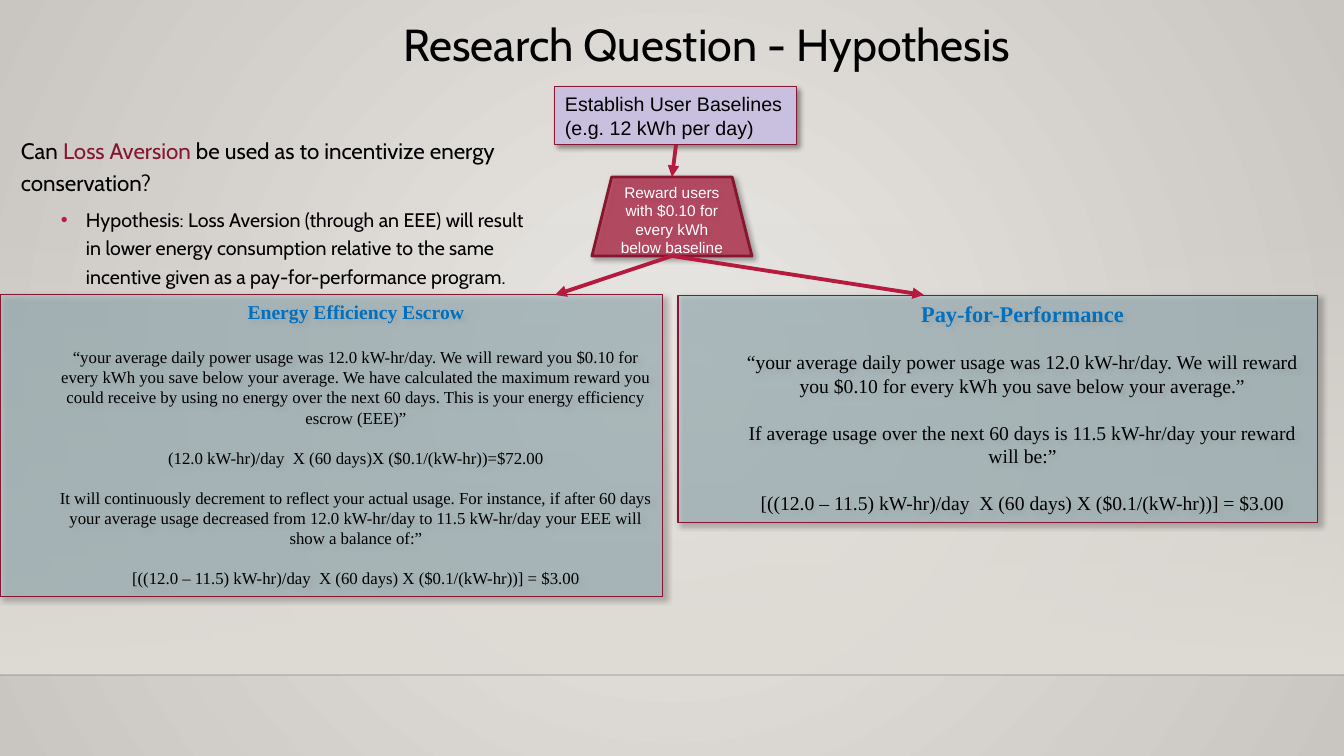
from pptx import Presentation
from pptx.dml.color import RGBColor
from pptx.enum.shapes import MSO_CONNECTOR, MSO_SHAPE
from pptx.enum.text import MSO_ANCHOR, MSO_AUTO_SIZE, PP_ALIGN
from pptx.oxml import parse_xml
from pptx.oxml.ns import nsdecls, qn
from pptx.util import Emu, Pt

RECTANGLE, TRAPEZOID = MSO_SHAPE.RECTANGLE, MSO_SHAPE.TRAPEZOID
STRAIGHT = MSO_CONNECTOR.STRAIGHT
TOP, MIDDLE = MSO_ANCHOR.TOP, MSO_ANCHOR.MIDDLE
LEFT, CENTER = PP_ALIGN.LEFT, PP_ALIGN.CENTER
FIXED, GROW = MSO_AUTO_SIZE.NONE, MSO_AUTO_SIZE.SHAPE_TO_FIT_TEXT
TOP_SIDE, BOTTOM_SIDE = 0, 2
WIDTH, HEIGHT = 1344, 756
EMU_PER_PX = 12192000 / WIDTH

COLORS = {
    "center": "EBE9E6", "edge": "C9C5C0", "floor": "DFDBD5", "horizon": "000001",
    "black": "000000", "white": "FFFFFF", "accent": "851530", "bullet": "B71E42",
    "outline": "871631", "arrow": "B71A3F", "baseline": "C9BFDF",
    "panel": "A4BEC6", "heading": "0070C0",
}


def px(value):
    return Emu(round(value * EMU_PER_PX))


def element(markup):
    """Parse one DrawingML element given without its namespace declaration."""
    head, tail = markup.split(">", 1)
    slash = "/" if head.endswith("/") else ""
    return parse_xml(f"{head.rstrip('/')} {nsdecls('a')}{slash}>{tail}")


def set_alpha(parent, percent):
    color = next(parent.iter(qn("a:srgbClr")))
    color.append(element(f'<a:alpha val="{percent * 1000}"/>'))


def set_gradient(parent, stops, direction):
    """Replace the solid fill of parent by (position, color, alpha) stops."""
    marks = "".join(
        f'<a:gs pos="{position * 1000}"><a:srgbClr val="{COLORS[color]}">'
        f'<a:alpha val="{alpha * 1000}"/></a:srgbClr></a:gs>'
        for position, color, alpha in stops)
    gradient = element(f"<a:gradFill><a:gsLst>{marks}</a:gsLst>{direction}</a:gradFill>")
    parent.replace(parent.find(qn("a:solidFill")), gradient)


class SlideBuilder:
    def __init__(self):
        self.presentation = Presentation()
        self.presentation.slide_width = px(WIDTH)
        self.presentation.slide_height = px(HEIGHT)
        layout = self.presentation.slide_layouts[1]
        self.slide = self.presentation.slides.add_slide(layout)
        self.shapes = self.slide.shapes

    def color(self, name):
        return RGBColor.from_string(COLORS[name])

    def backdrop(self, horizon, fade_top):
        fill = self.slide.background.fill
        fill.solid()
        fill.fore_color.rgb = self.color("center")
        set_gradient(
            next(self.slide._element.iter(qn("p:bgPr"))),
            [(0, "center", 100), (100, "edge", 100)],
            '<a:path path="circle"><a:fillToRect l="50000" t="50000" r="50000" b="50000"/></a:path>')
        fade = self.shape(RECTANGLE, (0, fade_top, WIDTH, horizon - fade_top), "floor")
        set_gradient(fade._element.spPr, [(0, "floor", 0), (100, "floor", 100)],
                     '<a:lin ang="5400000" scaled="0"/>')
        line = self.line((0, horizon), (WIDTH, horizon), "horizon", 1)
        set_alpha(line._element.spPr, 20)
        for shape in (fade, line):
            self.shapes.title._element.addprevious(shape._element)

    def place(self, shape, box):
        for name, value in zip(("left", "top", "width", "height"), box):
            setattr(shape, name, px(value))

    def shape(self, kind, box, fill, alpha=100, line_width=0):
        """Add a filled shape; an outlined one also casts a soft shadow."""
        shape = self.shapes.add_shape(kind, *map(px, box))
        shape.shadow.inherit = False
        shape.fill.solid()
        shape.fill.fore_color.rgb = self.color(fill)
        set_alpha(shape._element.spPr, alpha)
        if line_width:
            shape.line.color.rgb = self.color("outline")
            shape.line.width = Pt(line_width)
            shape._element.spPr.find(qn("a:effectLst")).append(element(
                f'<a:outerShdw blurRad="{Pt(4)}" dist="{Pt(3)}" dir="2700000" rotWithShape="0">'
                '<a:srgbClr val="000000"><a:alpha val="40000"/></a:srgbClr></a:outerShdw>'))
        else:
            shape.line.fill.background()
        return shape

    def frame(self, shape, anchor=TOP, auto_size=FIXED):
        values = {"word_wrap": True, "vertical_anchor": anchor, "auto_size": auto_size,
                  "margin_left": px(10), "margin_right": px(10),
                  "margin_top": px(5), "margin_bottom": px(5)}
        for name, value in values.items():
            setattr(shape.text_frame, name, value)
        return shape.text_frame

    def paragraph(self, frame, runs, font, size, align=LEFT, spacing=1.0, before=0,
                  indent=0, hanging=0, bullet=None, level=0, bold=False):
        """Fill the empty first paragraph or add one; runs are (text, color) pairs."""
        paragraph = frame.paragraphs[0] if not frame.text else frame.add_paragraph()
        properties = paragraph._p.get_or_add_pPr()
        properties.set("marL", str(px(indent)))
        properties.set("indent", str(-px(hanging)))
        if bullet:
            properties.append(element(f'<a:buClr><a:srgbClr val="{COLORS["bullet"]}"/></a:buClr>'))
            properties.append(element(f'<a:buChar char="{bullet}"/>'))
        else:
            properties.append(element("<a:buNone/>"))
        values = {"alignment": align, "line_spacing": spacing, "level": level,
                  "space_before": Pt(before), "space_after": Pt(0)}
        for name, value in values.items():
            setattr(paragraph, name, value)
        for text, color in runs:
            run = paragraph.add_run()
            run.text = text
            for name, value in {"name": font, "size": Pt(size), "bold": bold}.items():
                setattr(run.font, name, value)
            run.font.color.rgb = self.color(color)

    def title(self, text, box):
        title = self.shapes.title
        self.place(title, box)
        self.paragraph(self.frame(title), [(text, "black")], "Cabin", 32, CENTER, 0.9)

    def question(self, question, hypothesis, box):
        body = self.slide.placeholders[1]
        self.place(body, box)
        frame = self.frame(body)
        self.paragraph(frame, question, "Cabin", 16, spacing=1.2, indent=11)
        self.paragraph(frame, [(hypothesis, "black")], "Cabin", 14, spacing=1.2, before=5,
                       indent=76, hanging=25, bullet="•", level=1)

    def step(self, kind, box, text, fill, alpha, line_width, size, color, align, anchor, auto_size):
        step = self.shape(kind, box, fill, alpha, line_width)
        self.paragraph(self.frame(step, anchor, auto_size), [(text, color)], "Arial", size, align)
        return step

    def panel(self, box, heading, heading_size, texts, size):
        frame = self.frame(self.shape(RECTANGLE, box, "panel", 57, 0.75), auto_size=GROW)
        style = {"font": "Times New Roman", "align": CENTER, "indent": 49}
        self.paragraph(frame, [(heading, "heading")], size=heading_size, bold=True, **style)
        for number, text in enumerate(texts):
            gap = (size if number else 14) * 1.19
            self.paragraph(frame, [(text, "black")], size=size, before=round(gap, 1), **style)

    def line(self, start, end, color, width):
        line = self.shapes.add_connector(STRAIGHT, *map(px, start + end))
        line.line.color.rgb = self.color(color)
        line.line.width = Pt(width)
        line._element.spPr.append(element("<a:effectLst/>"))
        return line

    def arrow(self, source, end, target=None):
        """Draw from the bottom of source to a point, or to the top of target."""
        start = (source.left + source.width // 2) / EMU_PER_PX, (source.top + source.height) / EMU_PER_PX
        arrow = self.line(start, end, "arrow", 2.75)
        arrow.begin_connect(source, BOTTOM_SIDE)
        if target:
            arrow.end_connect(target, TOP_SIDE)
        arrow.line._get_or_add_ln().append(element('<a:tailEnd type="triangle"/>'))


def main():
    builder = SlideBuilder()
    builder.backdrop(horizon=675, fade_top=223)
    builder.title("Research Question - Hypothesis", (178, 18, 1058, 116))
    builder.question(
        [("Can ", "black"), ("Loss Aversion", "accent"),
         (" be used as to incentivize energy conservation?", "black")],
        "Hypothesis: Loss Aversion (through an EEE) will result in lower energy consumption "
        "relative to the same incentive given as a pay-for-performance program.",
        (0, 127, 544, 149))
    baseline = builder.step(
        RECTANGLE, (555, 87, 242, 58), "Establish User Baselines (e.g. 12 kWh per day)",
        "baseline", 100, 0.75, 14, "black", LEFT, TOP, GROW)
    reward = builder.step(
        TRAPEZOID, (592, 177, 160, 79), "Reward users with $0.10 for every kWh below baseline",
        "bullet", 67, 2, 11, "white", CENTER, MIDDLE, FIXED)
    builder.arrow(baseline, (672, 177), reward)

    usage = ("“your average daily power usage was 12.0 kW-hr/day. "
             "We will reward you $0.10 for every kWh you save below your average.")
    balance = "[((12.0 – 11.5) kW-hr)/day  X (60 days) X ($0.1/(kW-hr))] = $3.00"
    builder.panel((678, 295, 640, 228), "Pay-for-Performance", 16, [
        usage + "”",
        "If average usage over the next 60 days is 11.5 kW-hr/day your reward will be:”",
        balance], 14)
    builder.panel((0, 295, 663, 302), "Energy Efficiency Escrow", 14, [
        usage + " We have calculated the maximum reward you could receive by using no energy "
        "over the next 60 days. This is your energy efficiency escrow (EEE)”",
        "(12.0 kW-hr)/day  X (60 days)X ($0.1/(kW-hr))=$72.00",
        "It will continuously decrement to reflect your actual usage. For instance, if after "
        "60 days your average usage decreased from 12.0 kW-hr/day to 11.5 kW-hr/day your EEE "
        "will show a balance of:”",
        balance], 12)
    for end_x in (555, 924):
        builder.arrow(reward, (end_x, 295))
    builder.presentation.save("out.pptx")


if __name__ == "__main__":
    main()
